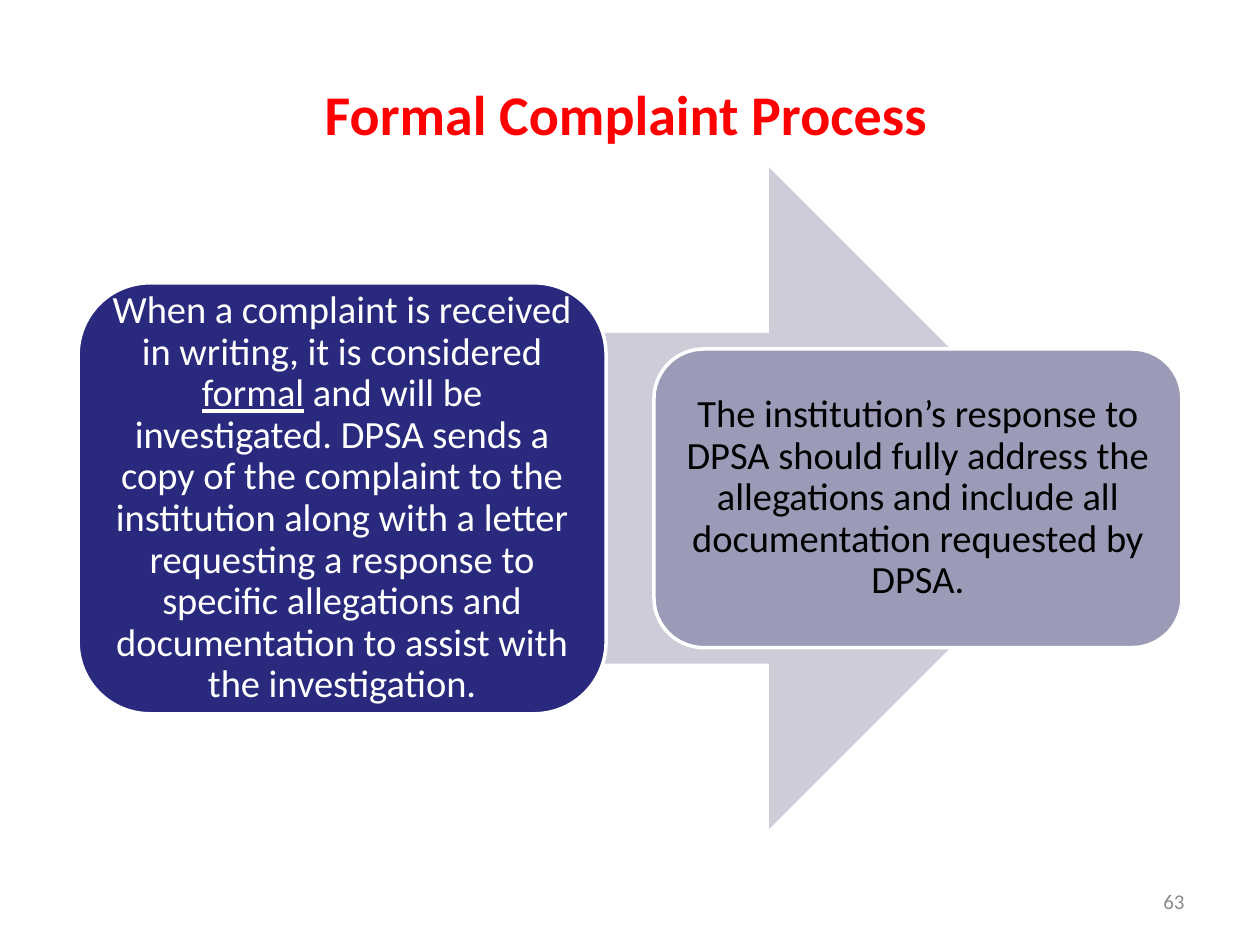
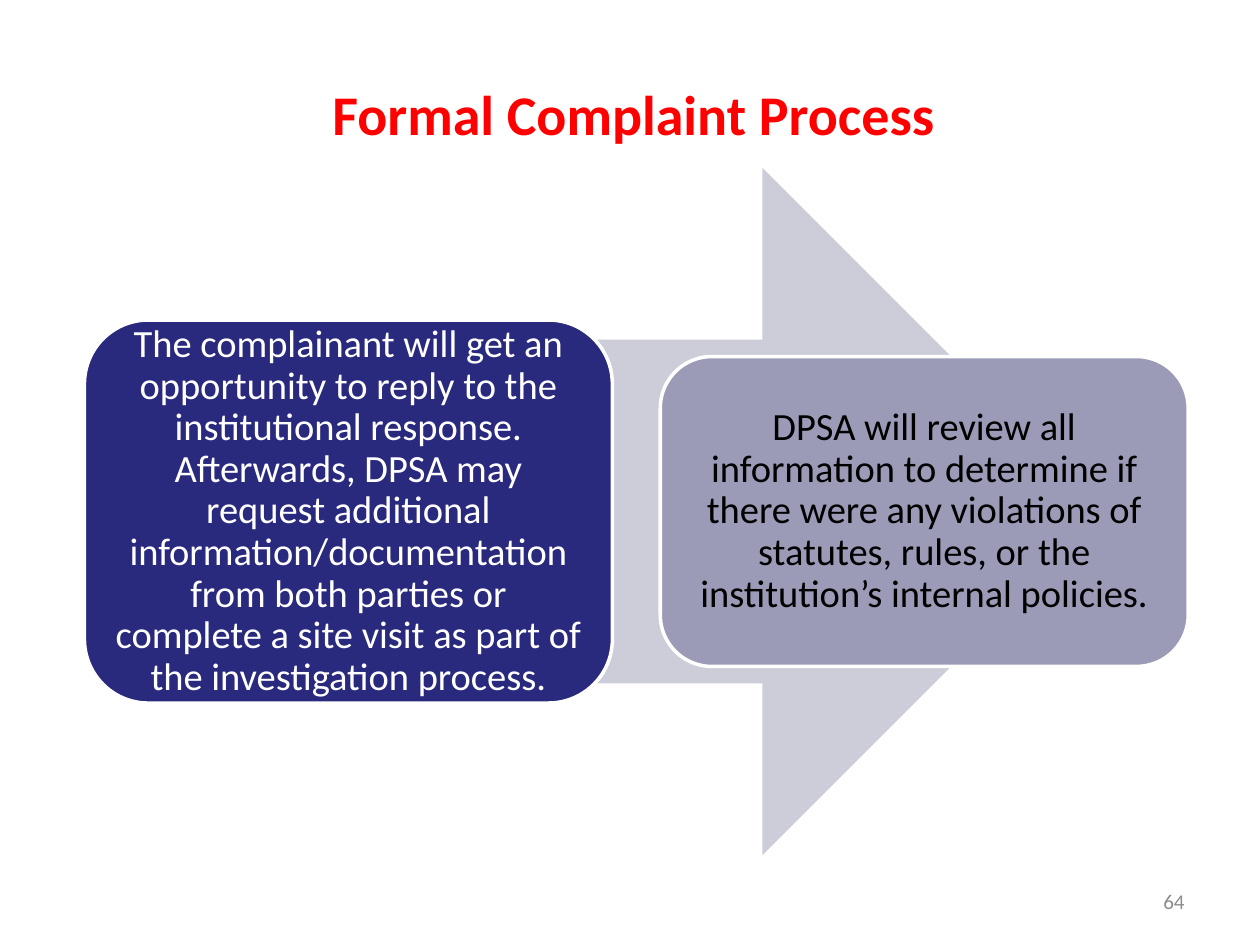
"""Builds two slides on the formal complaint process."""
from pptx import Presentation
from pptx.dml.color import RGBColor
from pptx.enum.shapes import MSO_SHAPE
from pptx.enum.text import MSO_ANCHOR, PP_ALIGN
from pptx.util import Inches, Pt

RED = RGBColor(0xFF, 0x00, 0x00)
NAVY = RGBColor(0x29, 0x29, 0x7D)
LAVENDER = RGBColor(0x9B, 0x9B, 0xB8)
PALE = RGBColor(0xCD, 0xCD, 0xDA)
GRAY = RGBColor(0x8C, 0x8C, 0x8C)
WHITE = RGBColor(0xFF, 0xFF, 0xFF)
BLACK = RGBColor(0x00, 0x00, 0x00)
ARROW = MSO_SHAPE.RIGHT_ARROW
ROUNDED = MSO_SHAPE.ROUNDED_RECTANGLE
TOP, MIDDLE = MSO_ANCHOR.TOP, MSO_ANCHOR.MIDDLE
CENTER, RIGHT = PP_ALIGN.CENTER, PP_ALIGN.RIGHT

FONT = "Calibri"
TITLE_ONLY = 5
TITLE = "Formal Complaint Process"
ARROW_TOP, ARROW_WIDTH = 1.33, 7.46
BOX_WIDTH, BOX_STEP, BOX_OFFSET = 4.19, 4.57, 0.65

PAGES = [
    {
        "number": "63", "title_left": 0.83, "arrow_left": 1.27, "arrow_height": 5.25,
        "steps": [
            (3.42, ["When a complaint is received in writing, it is considered ", "formal",
                    " and will be investigated. DPSA sends a copy of the complaint to the "
                    "institution along with a letter requesting a response to specific "
                    "allegations and documentation to assist with the investigation."]),
            (2.37, ["The institution’s response to DPSA should fully address the "
                    "allegations and include all documentation requested by DPSA."]),
        ],
    },
    {
        "number": "64", "title_left": 0.89, "arrow_left": 1.32, "arrow_height": 5.46,
        "steps": [
            (3.04, ["The complainant will get an opportunity to reply to the institutional "
                    "response. Afterwards, DPSA may request additional "
                    "information/documentation from both parties or complete a site visit "
                    "as part of the investigation process."]),
            (2.46, ["DPSA will review all information to determine if there were any "
                    "violations of statutes, rules, or the institution’s internal policies."]),
        ],
    },
]


class Deck:
    """Holds the presentation, its style and the current slide."""

    def __init__(self):
        self.presentation = Presentation()
        self.presentation.slide_width = Inches(10)
        self.presentation.slide_height = Inches(7.5)
        self.slide = None

    def new_slide(self):
        layout = self.presentation.slide_layouts[TITLE_ONLY]
        self.slide = self.presentation.slides.add_slide(layout)

    def set_text(self, shape, texts, size, color, align=CENTER, anchor=MIDDLE):
        frame = shape.text_frame
        frame.word_wrap = True
        frame.vertical_anchor = anchor
        paragraph = frame.paragraphs[0]
        paragraph.alignment = align
        for text in texts:
            run = paragraph.add_run()
            run.text = text
            run.font.name = FONT
            run.font.size = Pt(size)
            run.font.color.rgb = color
        return paragraph

    def title(self, text, left):
        shape = self.slide.shapes.title
        shape.left, shape.top = Inches(left), Inches(0.58)
        shape.width, shape.height = Inches(8.28), Inches(0.64)
        paragraph = self.set_text(shape, [text], 32, RED, anchor=TOP)
        paragraph.runs[0].font.bold = True

    def page_number(self, number):
        box = self.slide.shapes.add_textbox(
            Inches(7.17), Inches(6.95), Inches(2.33), Inches(0.4))
        self.set_text(box, [number], 12, GRAY, align=RIGHT)

    def block(self, kind, left, top, width, height, fill):
        shape = self.slide.shapes.add_shape(
            kind, Inches(left), Inches(top), Inches(width), Inches(height))
        shape.shadow.inherit = False
        shape.fill.solid()
        shape.fill.fore_color.rgb = fill
        shape.line.fill.background()
        return shape

    def step(self, left, middle, height, texts, fill, color):
        shape = self.block(ROUNDED, left, middle - height / 2, BOX_WIDTH, height, fill)
        shape.line.color.rgb = WHITE
        shape.line.width = Pt(2)
        frame = shape.text_frame
        frame.margin_left = frame.margin_right = Inches(0.09)
        frame.margin_top = frame.margin_bottom = Inches(0.09)
        paragraph = self.set_text(shape, texts, 22, color)
        paragraph.line_spacing = 0.9
        for run in paragraph.runs[1:2]:
            run.font.underline = True

    def process(self, arrow_left, arrow_height, steps):
        self.block(ARROW, arrow_left, ARROW_TOP, ARROW_WIDTH, arrow_height, PALE)
        middle = ARROW_TOP + arrow_height / 2
        styles = [(NAVY, WHITE), (LAVENDER, BLACK)]
        for index, ((height, texts), (fill, color)) in enumerate(zip(steps, styles)):
            left = arrow_left - BOX_OFFSET + index * BOX_STEP
            self.step(left, middle, height, texts, fill, color)


def main():
    deck = Deck()
    for page in PAGES:
        deck.new_slide()
        deck.title(TITLE, page["title_left"])
        deck.page_number(page["number"])
        deck.process(page["arrow_left"], page["arrow_height"], page["steps"])
    deck.presentation.save("out.pptx")


if __name__ == "__main__":
    main()
